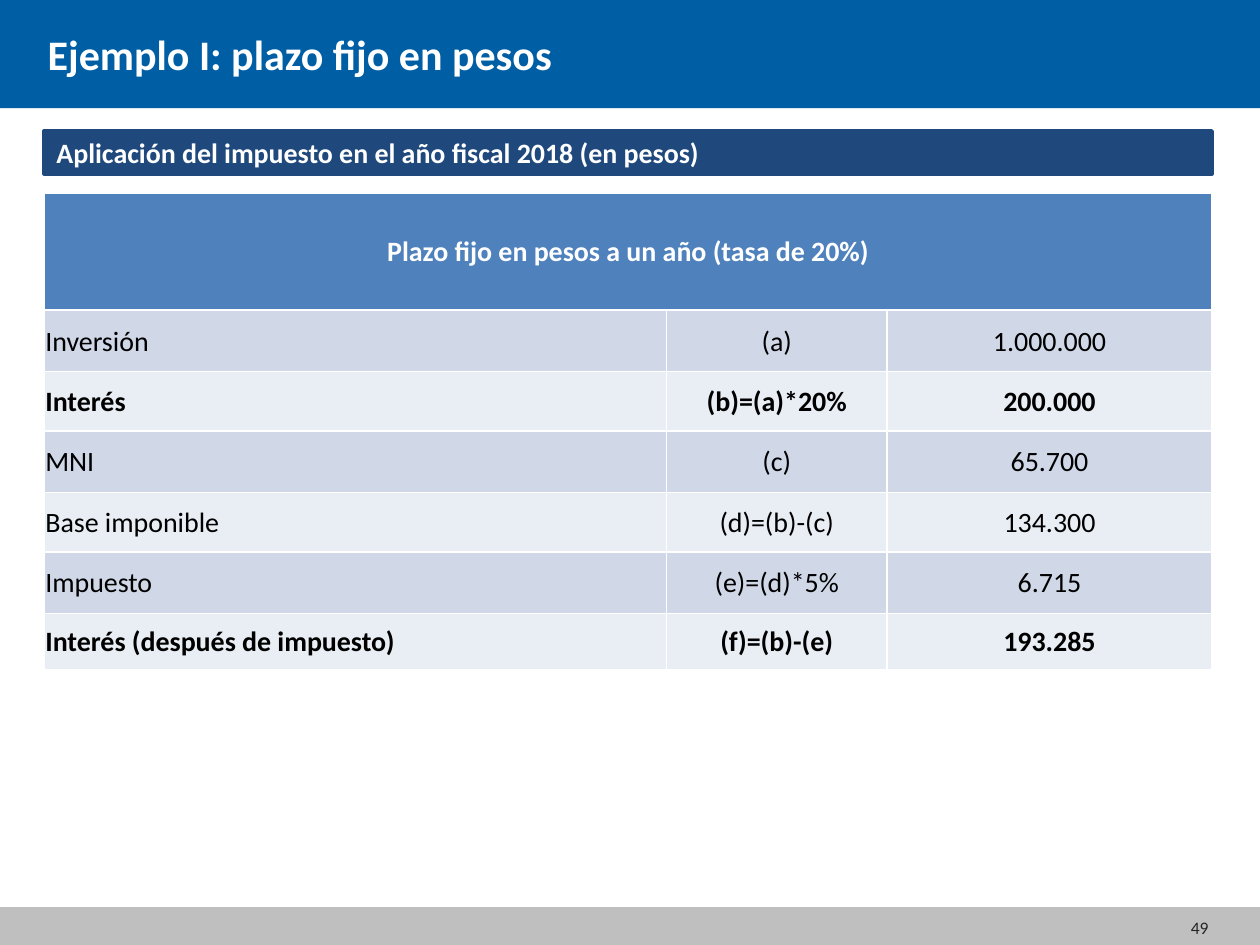
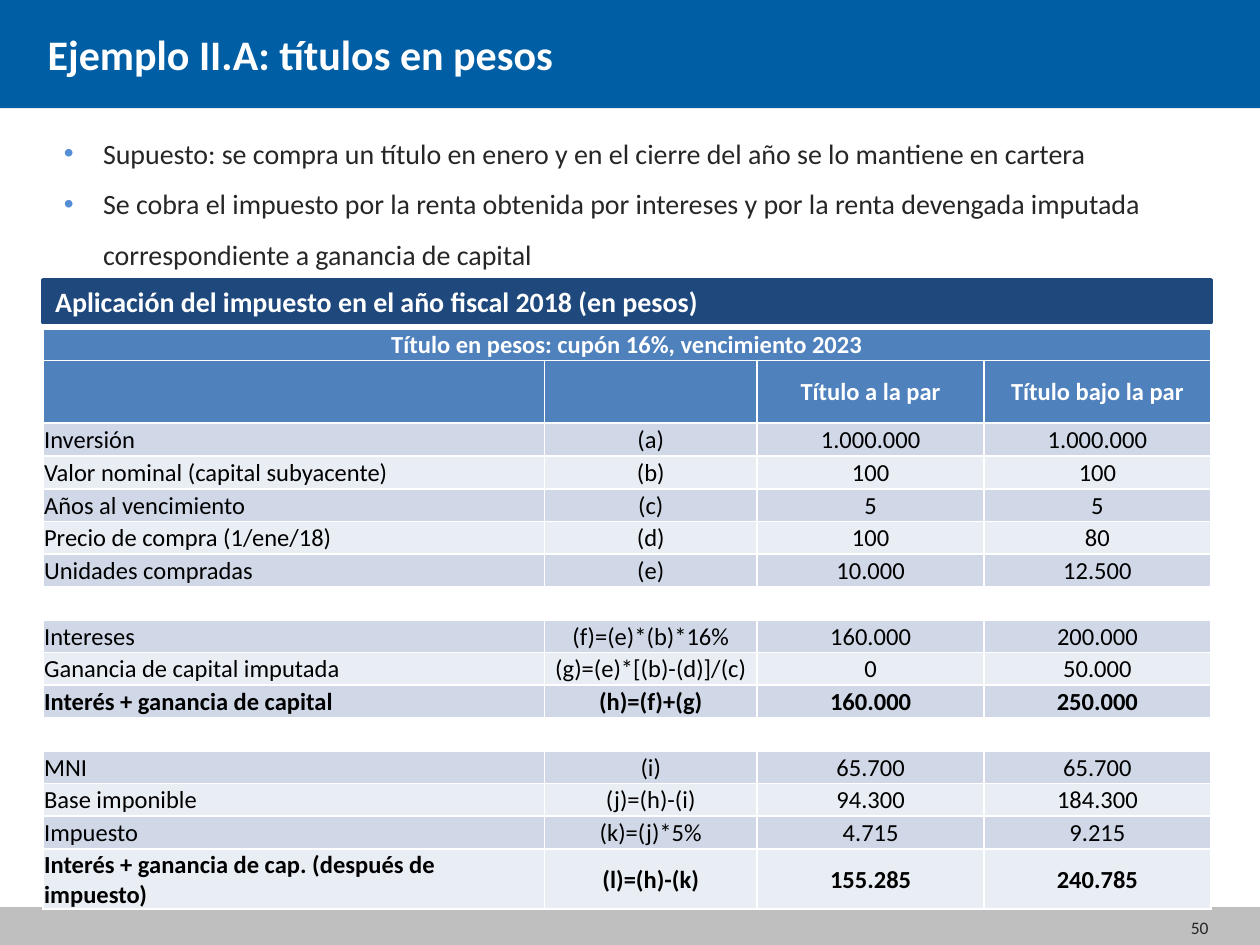
import dataclasses
import typing

import pptx
import pptx.dml.color
import pptx.enum.shapes
import pptx.enum.text
import pptx.oxml
import pptx.oxml.ns
import pptx.util

FONT = "Calibri"
COLORS = {
    "title band": "005EA4", "footer band": "BFBFBF", "caption": "1F497D",
    "header": "4F81BD", "dark row": "D0D8E8", "light row": "E9EDF4",
    "bullet": "558ED5", "body": "262626", "cell": "000000", "white": "FFFFFF",
}
ALIGN = pptx.enum.text.PP_ALIGN
MIDDLE = pptx.enum.text.MSO_ANCHOR.MIDDLE

# The slide is a grid of 100 columns by 75 rows
COLUMNS, ROWS = 100, 75
CELL = pptx.util.Inches(0.1)
CONTENT_WIDTH = 92.7


def grid(count: float) -> int:
    return round(count * CELL)


@dataclasses.dataclass(frozen=True)
class Area:
    left: float
    top: float
    width: float
    height: float

    def lengths(self) -> tuple[int, ...]:
        return tuple(grid(n) for n in dataclasses.astuple(self))


@dataclasses.dataclass(frozen=True)
class TextStyle:
    size: float
    color: str
    bold: bool = False
    align: typing.Any = ALIGN.LEFT


@dataclasses.dataclass(frozen=True)
class Row:
    texts: tuple[str, ...] = ()
    height: float = 2.6
    bold: bool = False
    header: bool = False


@dataclasses.dataclass(frozen=True)
class TaxTable:
    left: float
    top: float
    size: float
    columns: tuple[float, ...]
    rows: tuple[Row, ...]


@dataclasses.dataclass(frozen=True)
class Example:
    number: int
    title: str
    caption_left: float
    caption_top: float
    table: TaxTable
    assumptions: tuple[str, ...] = ()


TITLE_BAND = Area(0, 0, COLUMNS, 8.6)
TITLE = Area(2.8, 1.8, 94.5, 5)
FOOTER_BAND = Area(0, 72.1, COLUMNS, 2.9)
PAGE_NUMBER = Area(73.6, 71.6, 23.3, 4)
ASSUMPTIONS = Area(4.1, 9, 91.3, 13.1)
CAPTION = "Aplicación del impuesto en el año fiscal 2018 (en pesos)"

TITLE_STYLE = TextStyle(24, "white", bold=True)
CAPTION_STYLE = TextStyle(16, "white", bold=True)
PAGE_STYLE = TextStyle(10, "body", align=ALIGN.RIGHT)
ASSUMPTION_STYLE = TextStyle(16, "body")

EXAMPLES = (
    Example(49, "Ejemplo I: plazo fijo en pesos", 3.5, 10.4, TaxTable(
        3.5, 15.3, 16, (49.4, 17.5, 25.8), (
            Row(("Plazo fijo en pesos a un año (tasa de 20%)",), 9.3, True, True),
            Row(("Inversión", "(a)", "1.000.000"), 4.9),
            Row(("Interés", "(b)=(a)*20%", "200.000"), 4.7, True),
            Row(("MNI", "(c)", "65.700"), 4.9),
            Row(("Base imponible", "(d)=(b)-(c)", "134.300"), 4.7),
            Row(("Impuesto", "(e)=(d)*5%", "6.715"), 4.9),
            Row(("Interés (después de impuesto)", "(f)=(b)-(e)", "193.285"), 4.5, True),
        ))),
    Example(50, "Ejemplo II.A: títulos en pesos", 3.4, 22.2, TaxTable(
        3.4, 26.1, 14, (39.8, 16.9, 18, 18), (
            Row(("Título en pesos: cupón 16%, vencimiento 2023",), 2.5, True, True),
            Row(("", "", "Título a la par", "Título bajo la par"), 5, True, True),
            Row(("Inversión", "(a)", "1.000.000", "1.000.000")),
            Row(("Valor nominal (capital subyacente)", "(b)", "100", "100")),
            Row(("Años al vencimiento", "(c)", "5", "5")),
            Row(("Precio de compra (1/ene/18)", "(d)", "100", "80")),
            Row(("Unidades compradas", "(e)", "10.000", "12.500")),
            Row(),
            Row(("Intereses", "(f)=(e)*(b)*16%", "160.000", "200.000")),
            Row(("Ganancia de capital imputada", "(g)=(e)*[(b)-(d)]/(c)", "0", "50.000")),
            Row(("Interés + ganancia de capital", "(h)=(f)+(g)", "160.000", "250.000"),
                bold=True),
            Row(),
            Row(("MNI", "(i)", "65.700", "65.700")),
            Row(("Base imponible", "(j)=(h)-(i)", "94.300", "184.300")),
            Row(("Impuesto", "(k)=(j)*5%", "4.715", "9.215")),
            Row(("Interés + ganancia de cap. (después de impuesto)", "(l)=(h)-(k)",
                 "155.285", "240.785"), bold=True),
        )), (
            "Supuesto: se compra un título en enero y en el cierre del año se lo "
            "mantiene en cartera",
            "Se cobra el impuesto por la renta obtenida por intereses y por la renta "
            "devengada imputada correspondiente a ganancia de capital",
        )),
)


def rgb(name: str) -> pptx.dml.color.RGBColor:
    return pptx.dml.color.RGBColor.from_string(COLORS[name])


def write(paragraph, text: str, style: TextStyle) -> None:
    paragraph.text = text
    paragraph.alignment = style.align
    font = paragraph.font
    font.name, font.size, font.bold = FONT, pptx.util.Pt(style.size), style.bold
    font.color.rgb = rgb(style.color)


def add_band(slide, area: Area, color: str, outlined: bool = True):
    band = slide.shapes.add_shape(
        pptx.enum.shapes.MSO_SHAPE.RECTANGLE, *area.lengths())
    band.shadow.inherit = False
    band.fill.solid()
    band.fill.fore_color.rgb = rgb(color)
    if outlined:
        band.line.color.rgb = rgb(color)
        band.line.width = pptx.util.Pt(2)
    else:
        band.line.fill.background()
    return band


def add_text(slide, area: Area, texts: typing.Sequence[str], style: TextStyle):
    frame = slide.shapes.add_textbox(*area.lengths()).text_frame
    frame.word_wrap = True
    for index, text in enumerate(texts):
        paragraph = frame.add_paragraph() if index else frame.paragraphs[0]
        write(paragraph, text, style)
    return frame


def add_bullet(paragraph) -> None:
    paragraph.line_spacing = 1.5
    properties = paragraph._p.get_or_add_pPr()
    properties.set("marL", str(grid(3.1)))
    properties.set("indent", str(-grid(3.1)))
    namespace = pptx.oxml.ns.nsdecls("a")
    marks = (
        f'<a:buClr {namespace}><a:srgbClr val="{COLORS["bullet"]}"/></a:buClr>',
        f'<a:buFont {namespace} typeface="Arial"/>',
        f'<a:buChar {namespace} char="•"/>',
    )
    default_font = properties.find(pptx.oxml.ns.qn("a:defRPr"))
    for mark in marks:
        default_font.addprevious(pptx.oxml.parse_xml(mark))


def add_borders(cell, bottom: float) -> None:
    properties = cell._tc.get_or_add_tcPr()
    for side, points in (("L", 1), ("R", 1), ("T", 1), ("B", bottom)):
        properties.append(pptx.oxml.parse_xml(
            f'<a:ln{side} {pptx.oxml.ns.nsdecls("a")} w="{pptx.util.Pt(points)}">'
            f'<a:solidFill><a:srgbClr val="{COLORS["white"]}"/></a:solidFill>'
            f'</a:ln{side}>'))


def fill_cell(cell, text: str, style: TextStyle, fill: str | None, bottom: float) -> None:
    cell.margin_left = cell.margin_right = cell.margin_top = grid(0.1)
    cell.margin_bottom = 0
    cell.vertical_anchor = MIDDLE
    add_borders(cell, bottom)
    if fill:
        cell.fill.solid()
        cell.fill.fore_color.rgb = rgb(fill)
    else:
        cell.fill.background()
    write(cell.text_frame.paragraphs[0], text, style)


def add_tax_table(slide, spec: TaxTable) -> None:
    area = Area(spec.left, spec.top, CONTENT_WIDTH, sum(r.height for r in spec.rows))
    table = slide.shapes.add_table(
        len(spec.rows), len(spec.columns), *area.lengths()).table
    table.first_row = table.horz_banding = False
    for column, width in zip(table.columns, spec.columns):
        column.width = grid(width)

    header_count = sum(row.header for row in spec.rows)
    for r, row in enumerate(spec.rows):
        table.rows[r].height = grid(row.height)
        # Body rows alternate; a row without texts is a clear gap
        light = (r - header_count) % 2 == 1
        fill = "header" if row.header else "light row" if light else "dark row"
        thick = r == header_count - 1 or (light and not row.header)
        for c in range(len(spec.columns)):
            centred = row.header or c > 0
            style = TextStyle(spec.size, "white" if row.header else "cell", row.bold,
                              ALIGN.CENTER if centred else ALIGN.LEFT)
            fill_cell(table.cell(r, c), row.texts[c] if c < len(row.texts) else "",
                      style, fill if row.texts else None, 1.5 if thick else 1)
    table.cell(0, 0).merge(table.cell(0, len(spec.columns) - 1))


def add_example(deck, example: Example) -> None:
    slide = deck.slides.add_slide(deck.slide_layouts[6])

    # Shared frame: title band, footer band and page number
    add_band(slide, TITLE_BAND, "title band", outlined=False)
    add_band(slide, FOOTER_BAND, "footer band")
    page = add_text(slide, PAGE_NUMBER, [str(example.number)], PAGE_STYLE)
    page.vertical_anchor = MIDDLE
    add_text(slide, TITLE, [example.title], TITLE_STYLE)

    # Caption above the table
    caption_area = Area(example.caption_left, example.caption_top, CONTENT_WIDTH, 3.4)
    caption = add_band(slide, caption_area, "caption").text_frame
    caption.vertical_anchor = MIDDLE
    write(caption.paragraphs[0], CAPTION, CAPTION_STYLE)

    # Assumptions and tax computation
    if example.assumptions:
        assumptions = add_text(slide, ASSUMPTIONS, example.assumptions, ASSUMPTION_STYLE)
        for paragraph in assumptions.paragraphs:
            add_bullet(paragraph)
    add_tax_table(slide, example.table)


def main() -> None:
    deck = pptx.Presentation()
    deck.slide_width, deck.slide_height = grid(COLUMNS), grid(ROWS)
    for example in EXAMPLES:
        add_example(deck, example)
    deck.save("out.pptx")


if __name__ == "__main__":
    main()
